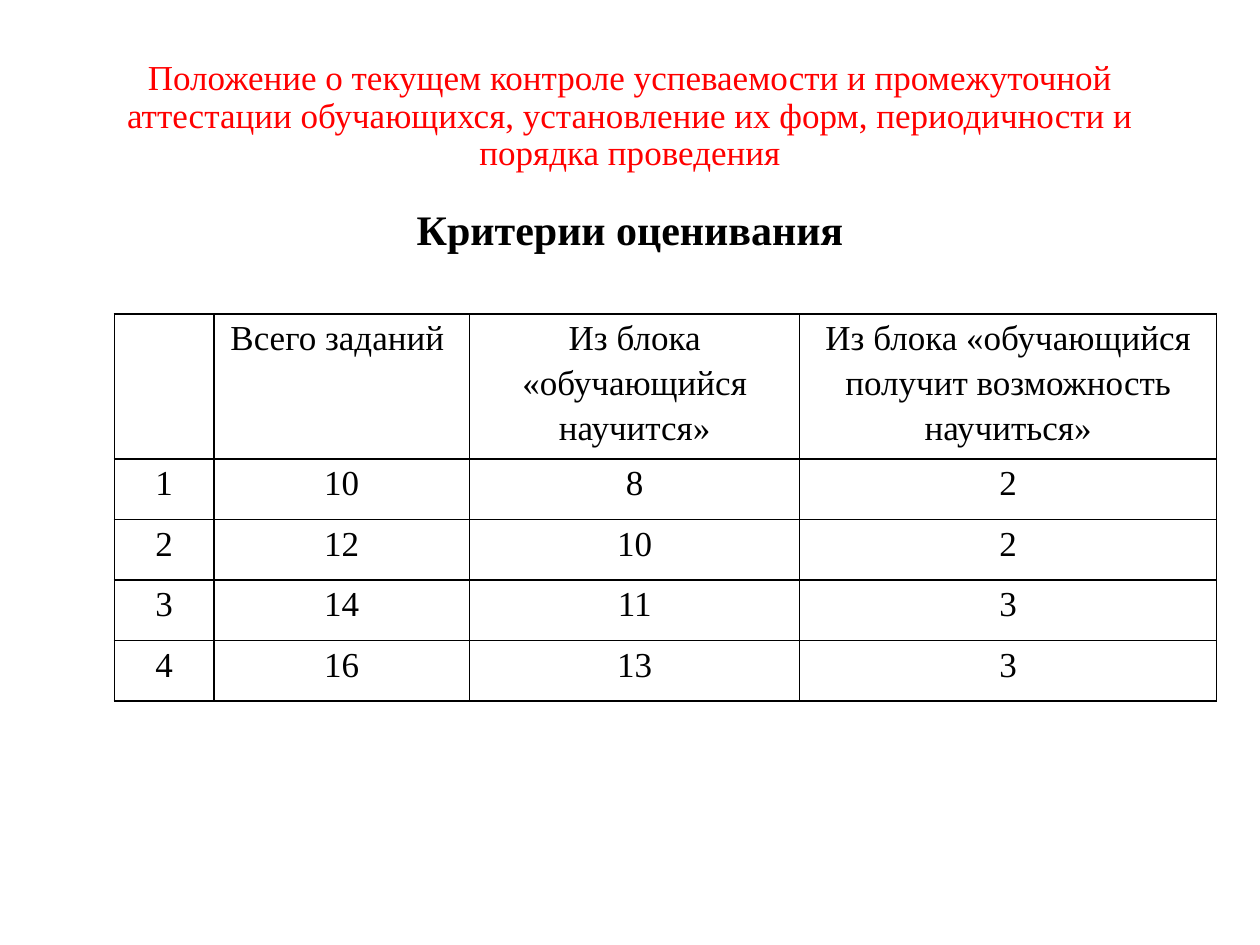
"""Build a slide with the assessment criteria table."""
from dataclasses import dataclass

from lxml.etree import SubElement
from pptx import Presentation
from pptx.dml.color import RGBColor
from pptx.enum.text import MSO_ANCHOR, PP_ALIGN
from pptx.oxml.ns import qn
from pptx.util import Pt


@dataclass(frozen=True)
class Theme:
    font: str = "Times New Roman"
    accent: str = "FF0000"
    ink: str = "000000"
    body: int = 20
    heading: int = 24


theme = Theme()


def write(para, text, size, color, spacing, bold=False):
    para.text = text
    para.alignment = PP_ALIGN.CENTER
    para.line_spacing = spacing
    para.font.name = theme.font
    para.font.size = Pt(size)
    para.font.bold = bold
    para.font.color.rgb = RGBColor.from_string(color)


def outline(cell):
    properties = cell._tc.get_or_add_tcPr()
    for side in ("lnL", "lnR", "lnT", "lnB"):
        line = SubElement(properties, qn(f"a:{side}"), w=str(Pt(1)))
        fill = SubElement(line, qn("a:solidFill"))
        SubElement(fill, qn("a:srgbClr"), val=theme.ink)


deck = Presentation()
deck.slide_width, deck.slide_height = Pt(720), Pt(540)
page = deck.slides.add_slide(deck.slide_layouts[6])

title = page.shapes.add_textbox(Pt(49.5), Pt(28.8), Pt(621), Pt(122.4))
frame = title.text_frame
frame.word_wrap = True
frame.vertical_anchor = MSO_ANCHOR.MIDDLE
write(
    frame.paragraphs[0],
    "Положение о текущем контроле успеваемости и промежуточной аттестации "
    "обучающихся, установление их форм, периодичности и порядка проведения",
    theme.body, theme.accent, 0.9,
)
heading = frame.add_paragraph()
write(heading, "Критерии оценивания", theme.heading, theme.ink, 0.9, bold=True)
heading.space_before = Pt(20.7)

rows = [
    ("", "Всего заданий ", "Из блока «обучающийся научится»",
     "Из блока «обучающийся получит возможность научиться»"),
    ("1", "10", "8", "2"),
    ("2", "12", "10", "2"),
    ("3", "14", "11", "3"),
    ("4", "16", "13", "3"),
]
widths = [56.9, 146.2, 188.6, 238.3]
heights = [71.3] + [34.6] * 4

table = page.shapes.add_table(
    len(rows), len(widths), Pt(65.3), Pt(179.3), Pt(sum(widths)), Pt(sum(heights))
).table
table.first_row = table.horz_banding = False
for column, width in zip(table.columns, widths):
    column.width = Pt(width)
for row, height, texts in zip(table.rows, heights, rows):
    row.height = Pt(height)
    for cell, text in zip(row.cells, texts):
        outline(cell)
        cell.fill.background()
        cell.margin_left = cell.margin_right = Pt(5)
        cell.margin_top = cell.margin_bottom = Pt(0)
        write(cell.text_frame.paragraphs[0], text, theme.body, theme.ink, 1.15)

deck.save("out.pptx")
